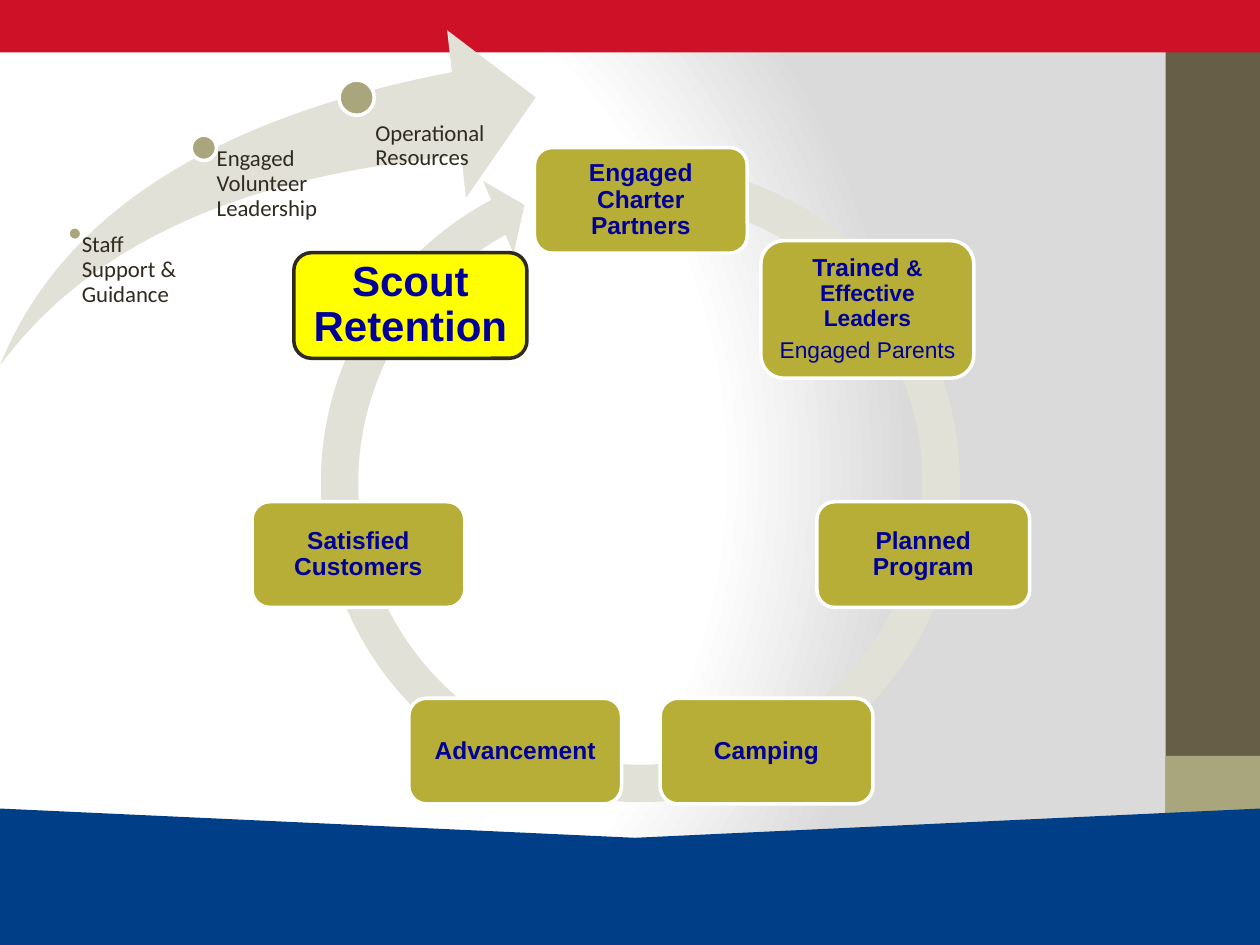
import math

import lxml.etree
import pptx
import pptx.dml.color
import pptx.enum.shapes
import pptx.enum.text
import pptx.oxml
import pptx.util

Cm, Pt = pptx.util.Cm, pptx.util.Pt
SHAPE = pptx.enum.shapes.MSO_SHAPE
ANCHOR = pptx.enum.text.MSO_ANCHOR
ALIGN = pptx.enum.text.PP_ALIGN

WIDTH, HEIGHT = 25.4, 19.05
NAVY, INK, WHITE = "000099", "2F2B20", "FFFFFF"
OLIVE, YELLOW, SAND, PALE = "B7AE38", "FFFF00", "A9A57C", "E2E1D7"

# left, top, width, height, colour
SIDE_BANDS = [
    (23.5, 0, 1.9, HEIGHT, "675E47"),
    (23.5, 15.24, 1.9, 1.9, SAND),
]
TOP_BAND = (0, 0, WIDTH, 1.06, "CE1126")
FOOTER = [(0, 16.3), (12.8, 16.89), (WIDTH, 16.3), (WIDTH, HEIGHT), (0, HEIGHT)]

# dot centre x, y, diameter; label left, top, width, height; text
SUPPORTS = [
    ((1.51, 4.71, 0.28), (1.65, 4.7, 2.36, 1.96), "Staff Support & Guidance"),
    ((4.11, 2.98, 0.51), (4.37, 2.97, 2.31, 3.68), "Engaged Volunteer Leadership"),
    ((7.19, 1.97, 0.71), (7.57, 2.45, 2.28, 4.2), "Operational Resources"),
]

# Clockwise from the top; each paragraph is a list of (text, size, bold)
CYCLE = [
    {"text": [[("Engaged Charter Partners", 14, True)]]},
    {"text": [[("Trained", 14, True), (" & Effective Leaders", 13, True)],
              [("Engaged Parents", 13, False)]], "height": 2.77},
    {"text": [[("Planned Program", 14, True)]]},
    {"text": [[("Camping", 14, True)]]},
    {"text": [[("Advancement", 14, True)]]},
    {"text": [[("Satisfied Customers", 14, True)]]},
    {"text": [[("Scout Retention", 24, True)]], "width": 4.7, "shift": -0.08,
     "fill": YELLOW, "line": INK, "inset": 0.25},
]
CYCLE_X, CYCLE_Y, CYCLE_RADIUS = 12.92, 9.88, 5.84
CARD_WIDTH, CARD_HEIGHT = 4.29, 2.13

BACKGROUND = (
    '<a:gradFill xmlns:a="http://schemas.openxmlformats.org/drawingml/2006/main" rotWithShape="1">'
    '<a:gsLst><a:gs pos="0"><a:srgbClr val="FFFFFF"/></a:gs>'
    '<a:gs pos="75000"><a:srgbClr val="FFFFFF"/></a:gs>'
    '<a:gs pos="100000"><a:srgbClr val="DADADA"/></a:gs></a:gsLst>'
    '<a:path path="circle"><a:fillToRect l="20000" t="50000" r="100000" b="50000"/></a:path>'
    '</a:gradFill>'
)


def rgb(colour):
    return pptx.dml.color.RGBColor.from_string(colour)


def paint(shape, fill, line=None):
    shape.shadow.inherit = False
    shape.fill.solid()
    shape.fill.fore_color.rgb = rgb(fill)
    if line:
        shape.line.color.rgb = rgb(line)
        shape.line.width = Pt(2)
    else:
        shape.line.fill.background()


def add_preset(slide, preset, box, fill, line=None, adjustments=()):
    shape = slide.shapes.add_shape(preset, *map(Cm, box))
    paint(shape, fill, line)
    for index, value in enumerate(adjustments):
        shape.adjustments[index] = value
    return shape


def set_insets(frame, left, top, right, bottom):
    frame.word_wrap = True
    frame.margin_left, frame.margin_top = Cm(left), Cm(top)
    frame.margin_right, frame.margin_bottom = Cm(right), Cm(bottom)


def write(frame, paragraphs, font, colour, align):
    for index, runs in enumerate(paragraphs):
        paragraph = frame.paragraphs[0] if index == 0 else frame.add_paragraph()
        paragraph.alignment = align
        paragraph.line_spacing = 0.9
        paragraph.space_after = Pt(4.5)
        for text, size, bold in runs:
            run = paragraph.add_run()
            run.text = text
            run.font.name = font
            run.font.size = Pt(size)
            run.font.bold = bold
            run.font.color.rgb = rgb(colour)


def add_backdrop(slide):
    fill = slide.background.fill
    fill.solid()
    properties = slide.element.cSld.bg.bgPr
    properties.replace(properties[0], pptx.oxml.parse_xml(BACKGROUND))
    for *box, colour in SIDE_BANDS:
        add_preset(slide, SHAPE.RECTANGLE, box, colour)
    points = [(Cm(x), Cm(y)) for x, y in FOOTER]
    builder = slide.shapes.build_freeform(*points[0])
    builder.add_line_segments(points[1:], close=True)
    paint(builder.convert_to_shape(), "003F87")
    *box, colour = TOP_BAND
    add_preset(slide, SHAPE.RECTANGLE, box, colour)


def add_supports(slide):
    add_preset(slide, SHAPE.SWOOSH_ARROW, (0, 0.61, 10.8, 6.76), PALE,
               adjustments=(0.25, 0.25))
    for (x, y, size), label_box, text in SUPPORTS:
        add_preset(slide, SHAPE.OVAL, (x - size / 2, y - size / 2, size, size), SAND, WHITE)
        frame = slide.shapes.add_textbox(*map(Cm, label_box)).text_frame
        set_insets(frame, 0, 0, 0, 0)
        write(frame, [[(text, 13, False)]], "Calibri", INK, ALIGN.LEFT)


def add_cycle(slide):
    add_preset(slide, SHAPE.CIRCULAR_ARROW, (6.05, 2.87, 13.72, 13.72), PALE,
               adjustments=(0.055, 3.307, 145.105, 169.532, 0.058))
    for index, step in enumerate(CYCLE):
        angle = 2 * math.pi * index / len(CYCLE)
        shift = step.get("shift", 0)
        x = CYCLE_X + CYCLE_RADIUS * math.sin(angle) + shift
        y = CYCLE_Y - CYCLE_RADIUS * math.cos(angle) + shift
        width = step.get("width", CARD_WIDTH)
        height = step.get("height", CARD_HEIGHT)
        card = add_preset(slide, SHAPE.ROUNDED_RECTANGLE,
                          (x - width / 2, y - height / 2, width, height),
                          step.get("fill", OLIVE), step.get("line", WHITE))
        frame = card.text_frame
        set_insets(frame, *[step.get("inset", 0.15)] * 4)
        frame.vertical_anchor = ANCHOR.MIDDLE
        write(frame, step["text"], "Arial", NAVY, ALIGN.CENTER)


def main():
    deck = pptx.Presentation()
    deck.slide_width, deck.slide_height = Cm(WIDTH), Cm(HEIGHT)
    slide = deck.slides.add_slide(deck.slide_layouts[6])
    add_backdrop(slide)
    add_supports(slide)
    add_cycle(slide)
    deck.save("out.pptx")


if __name__ == "__main__":
    main()
